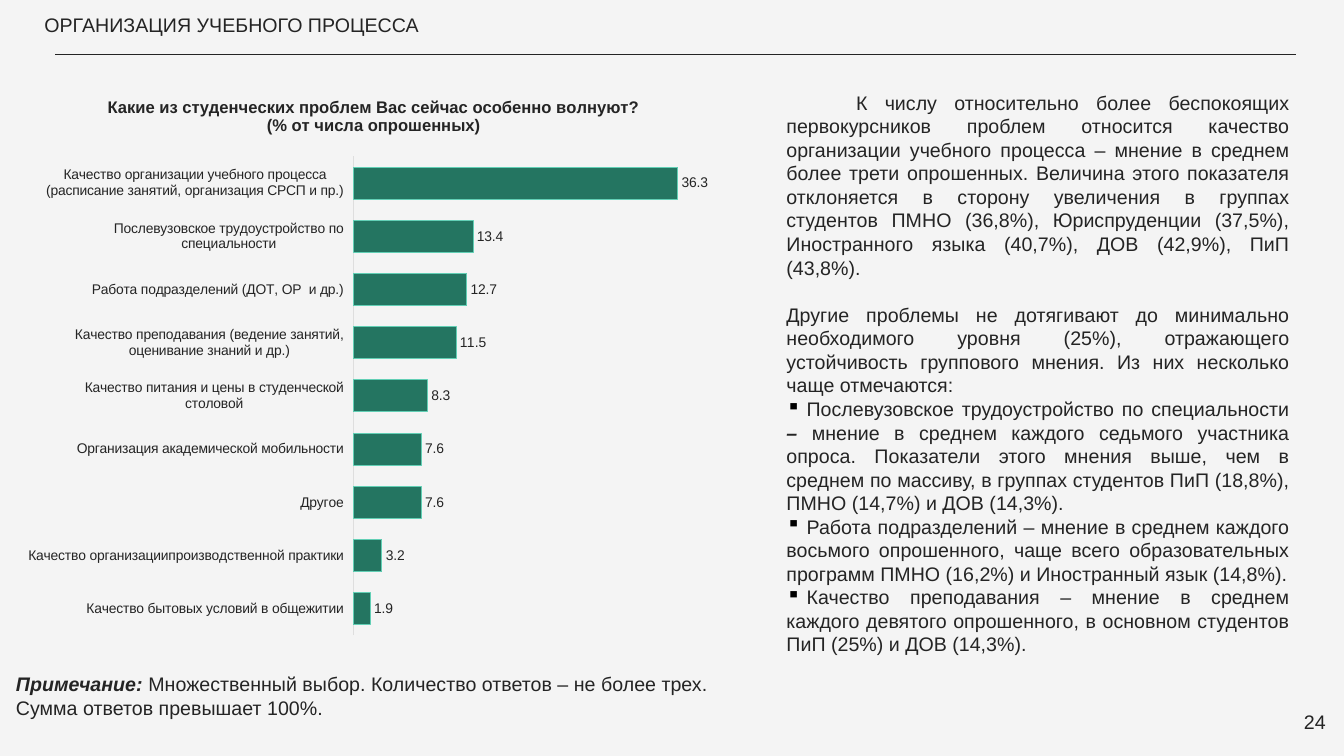
from lxml import etree
from pptx import Presentation
from pptx.chart.data import CategoryChartData
from pptx.dml.color import RGBColor
from pptx.enum.chart import XL_CHART_TYPE, XL_LABEL_POSITION, XL_TICK_LABEL_POSITION, XL_TICK_MARK
from pptx.enum.shapes import MSO_CONNECTOR
from pptx.enum.text import MSO_ANCHOR, PP_ALIGN
from pptx.oxml import parse_xml
from pptx.oxml.ns import nsdecls, qn
from pptx.util import Inches, Pt

BAR = XL_CHART_TYPE.BAR_CLUSTERED
OUTSIDE_END = XL_LABEL_POSITION.OUTSIDE_END
LABELS_LOW = XL_TICK_LABEL_POSITION.LOW
NO_TICK = XL_TICK_MARK.NONE
STRAIGHT = MSO_CONNECTOR.STRAIGHT
TOP = MSO_ANCHOR.TOP
LEFT, RIGHT, JUSTIFY = PP_ALIGN.LEFT, PP_ALIGN.RIGHT, PP_ALIGN.JUSTIFY

PROBLEMS = {
    "Качество бытовых условий в общежитии": 1.9,
    "Качество организациипроизводственной практики": 3.2,
    "Другое": 7.6,
    "Организация академической мобильности": 7.6,
    "Качество питания и цены в студенческой столовой": 8.3,
    "Качество преподавания (ведение занятий, оценивание знаний и др.)": 11.5,
    "Работа подразделений (ДОТ, ОР  и др.)": 12.7,
    "Послевузовское трудоустройство по специальности": 13.4,
    "Качество организации учебного процесса (расписание занятий, организация СРСП и пр.)": 36.3,
}
QUESTION = ["Какие из студенческих проблем Вас сейчас особенно волнуют?", "(% от числа опрошенных)"]
LEADING = (
    "К числу относительно более беспокоящих первокурсников проблем относится качество "
    "организации учебного процесса – мнение в среднем более трети опрошенных. Величина этого "
    "показателя отклоняется в сторону увеличения в группах студентов ПМНО (36,8%), "
    "Юриспруденции (37,5%), Иностранного языка (40,7%), ДОВ (42,9%), ПиП (43,8%)."
)
OTHERS = (
    "Другие проблемы не дотягивают до минимально необходимого уровня (25%), отражающего "
    "устойчивость группового мнения. Из них несколько чаще отмечаются:"
)
# Each bullet is a list of (text, is emphasised)
BULLETS = [
    [("Послевузовское трудоустройство по специальности ", False),
     ("– ", True),
     ("мнение в среднем каждого седьмого участника опроса. Показатели этого мнения выше, чем в "
      "среднем по массиву, в группах студентов ПиП (18,8%), ПМНО (14,7%) и ДОВ (14,3%).", False)],
    [("Работа подразделений – мнение в среднем каждого восьмого опрошенного, чаще всего "
      "образовательных программ ПМНО (16,2%) и Иностранный язык (14,8%).", False)],
    [("Качество преподавания – мнение в среднем каждого девятого опрошенного, в основном "
      "студентов ПиП (25%) и ДОВ (14,3%).", False)],
]
NOTE = [("Примечание: ", True),
        ("Множественный выбор. Количество ответов – не более трех. "
         "Сумма ответов превышает 100%.", False)]


def color(hex_string):
    return RGBColor.from_string(hex_string)


class SlideBuilder:
    font_name = "Arial"
    ink, paper = "242424", "F4F4F4"
    bar_fill, bar_edge, axis_line = "247561", "62CFB5", "DEDEDE"
    text_size = 14

    def __init__(self, deck):
        self.page = deck.slides.add_slide(deck.slide_layouts[5])
        self.page.background.fill.solid()
        self.page.background.fill.fore_color.rgb = color(self.paper)

    def style(self, font, size, bold=False, italic=False):
        font.name, font.size = self.font_name, Pt(size)
        font.bold, font.italic = bold, italic
        font.color.rgb = color(self.ink)

    def frame(self, box, inset_x=0.13, inset_y=0.13):
        frame = box.text_frame
        frame.word_wrap = True
        frame.vertical_anchor = TOP
        frame.margin_left = frame.margin_right = Inches(inset_x)
        frame.margin_top = frame.margin_bottom = Inches(inset_y)
        return frame

    def text_box(self, left, top, width, height, **insets):
        box = self.page.shapes.add_textbox(Inches(left), Inches(top), Inches(width), Inches(height))
        return self.frame(box, **insets)

    def add_spans(self, para, spans, align=LEFT):
        para.alignment = align
        for text, emphasised in spans:
            span = para.add_run()
            span.text = text
            self.style(span.font, self.text_size, emphasised, emphasised)

    def title(self, text, left, top, width, height):
        box = self.page.shapes.title
        box.left, box.top, box.width, box.height = map(Inches, (left, top, width, height))
        self.add_spans(self.frame(box, inset_x=0).paragraphs[0], [(text, False)])

    def first_line(self, para, indent):
        properties = para._p.get_or_add_pPr()
        properties.set("marL", "0")
        properties.set("indent", str(Inches(indent)))

    def bullet(self, para, gap=0.2):
        self.first_line(para, 0)
        properties = para._p.get_or_add_pPr()
        bullet_color = etree.SubElement(properties, qn("a:buClr"))
        etree.SubElement(bullet_color, qn("a:srgbClr")).set("val", "000000")
        etree.SubElement(properties, qn("a:buChar")).set("char", "▪")
        stops = etree.SubElement(properties, qn("a:tabLst"))
        stop = etree.SubElement(stops, qn("a:tab"))
        stop.set("pos", str(Inches(gap)))
        stop.set("algn", "l")

    def rule(self, left, right, top):
        line = self.page.shapes.add_connector(
            STRAIGHT, Inches(left), Inches(top), Inches(right), Inches(top))
        line.line.color.rgb = color(self.ink)
        line.line.width = Pt(0.75)
        etree.SubElement(line._element.spPr, qn("a:effectLst"))

    def bar_chart(self, values, heading, left, top, width, height):
        data = CategoryChartData()
        data.categories = list(values)
        data.add_series("Series 1", list(values.values()))
        chart = self.page.shapes.add_chart(
            BAR, Inches(left), Inches(top), Inches(width), Inches(height), data).chart
        self.style(chart.font, 10)
        chart.has_legend = False

        # Heading
        chart.has_title = True
        frame = chart.chart_title.text_frame
        for index, text in enumerate(heading):
            para = frame.add_paragraph() if index else frame.paragraphs[0]
            span = para.add_run()
            span.text = text
            self.style(span.font, 12, bold=True)
        chart.chart_title.include_in_layout = False

        # Axes
        names, scale = chart.category_axis, chart.value_axis
        names.major_tick_mark = names.minor_tick_mark = NO_TICK
        names.tick_label_position = LABELS_LOW
        names.format.line.color.rgb = color(self.axis_line)
        names.format.line.width = Pt(0.75)
        self.style(names.tick_labels.font, 10)
        scale.minimum_scale, scale.maximum_scale = 0, 40
        scale.has_major_gridlines = False
        scale.visible = False

        # Bars and their values
        plot = chart.plots[0]
        plot.gap_width = 66
        plot.vary_by_categories = False
        bars = plot.series[0]
        bars.format.fill.solid()
        bars.format.fill.fore_color.rgb = color(self.bar_fill)
        bars.format.line.color.rgb = color(self.bar_edge)
        bars.format.line.width = Pt(0.75)
        labels = bars.data_labels
        labels.show_value = True
        labels.position = OUTSIDE_END
        self.style(labels.font, 10)

        # Plot area
        area = chart._chartSpace.chart.plotArea
        for old in area.findall(qn("c:layout")):
            area.remove(old)
        sizes = {"x": 0.47, "y": 0.14, "w": 0.53, "h": 0.85}
        places = "".join(f'<c:{key} val="{size}"/>' for key, size in sizes.items())
        area.insert(0, parse_xml(
            f'<c:layout {nsdecls("c")}><c:manualLayout><c:layoutTarget val="inner"/>'
            f'<c:xMode val="edge"/><c:yMode val="edge"/>{places}</c:manualLayout></c:layout>'))


def main():
    deck = Presentation()
    deck.slide_width, deck.slide_height = Inches(13.33), Inches(7.5)
    slide = SlideBuilder(deck)

    # Header
    slide.rule(0.55, 12.85, 0.54)
    slide.title("ОРГАНИЗАЦИЯ УЧЕБНОГО ПРОЦЕССА", 0.44, 0, 5.57, 0.5)

    # Survey chart and its note
    slide.bar_chart(PROBLEMS, QUESTION, 0.28, 0.77, 6.77, 5.59)
    note = slide.text_box(0.06, 6.62, 7.21, 0.57, inset_x=0.1, inset_y=0.05)
    slide.add_spans(note.paragraphs[0], NOTE)

    # Commentary
    comments = slide.text_box(7.67, 0.77, 5.25, 6)
    leading = comments.paragraphs[0]
    slide.add_spans(leading, [(LEADING, False)], JUSTIFY)
    slide.first_line(leading, 0.69)
    others = comments.add_paragraph()
    others.space_before = Pt(17)
    slide.add_spans(others, [(OTHERS, False)], JUSTIFY)
    for spans in BULLETS:
        para = comments.add_paragraph()
        slide.bullet(para)
        slide.add_spans(para, [("\t", False)] + spans, JUSTIFY)

    # Page number
    number = slide.text_box(12.48, 6.93, 0.8, 0.57)
    slide.add_spans(number.paragraphs[0], [("24", False)], RIGHT)

    deck.save("out.pptx")


if __name__ == "__main__":
    main()
